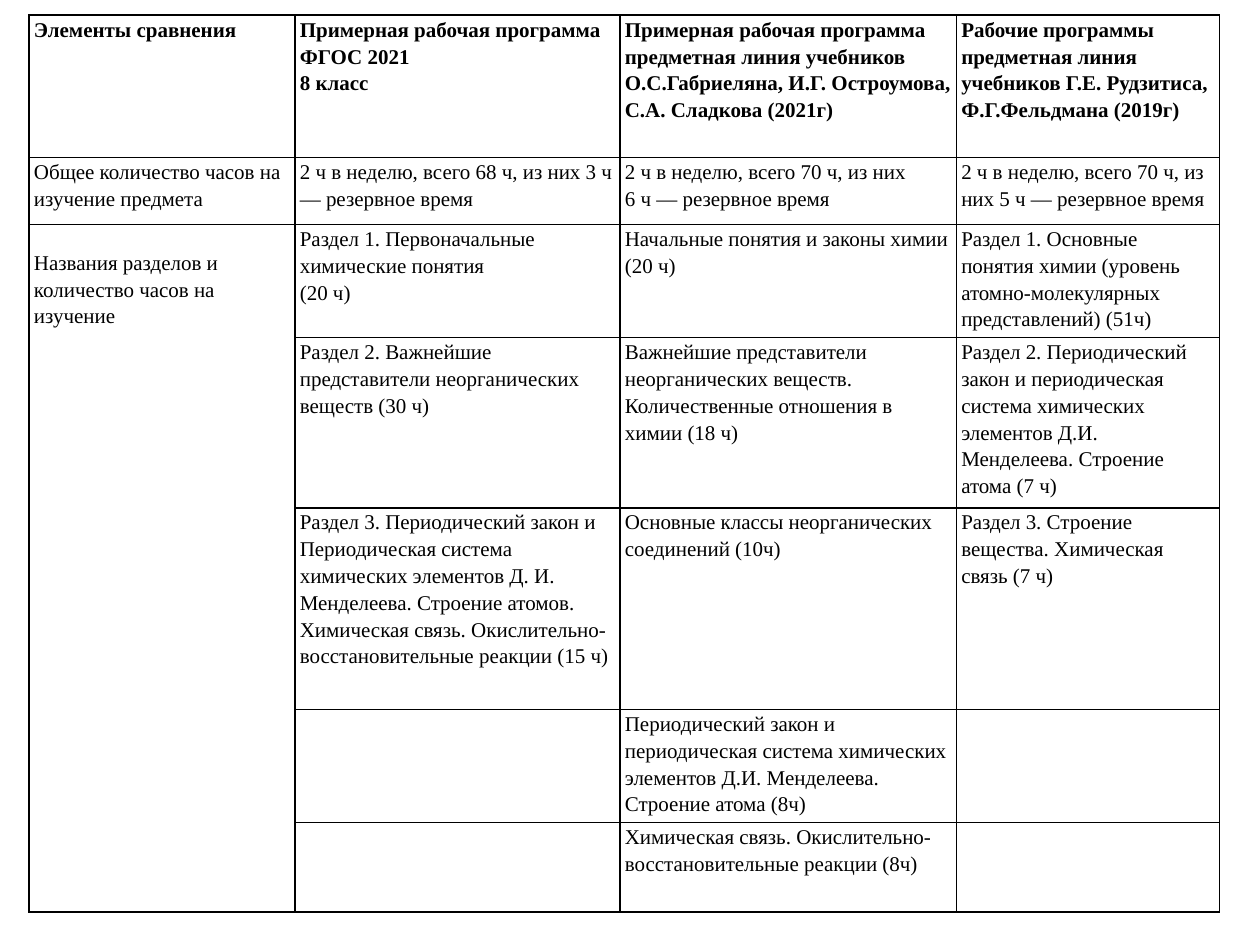
from lxml.etree import SubElement
from pptx import Presentation
from pptx.dml.color import RGBColor
from pptx.oxml.ns import qn
from pptx.util import Inches, Pt

COLOURS = {"ink": "000000"}
COLUMN_SHARES = [21.1, 25.8, 26.7, 20.9]
ROW_SHARES = [15.07, 7.07, 12, 18, 21.33, 12, 9.47]
SECTIONS_ROW = 2
COMPARISON = [
    ["Элементы сравнения",
     "Примерная рабочая программа ФГОС 2021\n8 класс",
     "Примерная рабочая программа предметная линия учебников "
     "О.С.Габриеляна, И.Г. Остроумова, С.А. Сладкова (2021г)",
     "Рабочие программы предметная линия учебников Г.Е. Рудзитиса, "
     "Ф.Г.Фельдмана (2019г)"],
    ["Общее количество часов на изучение предмета",
     "2 ч в неделю, всего 68 ч, из них 3 ч — резервное время",
     "2 ч в неделю, всего 70 ч, из них\n6 ч — резервное время",
     "2 ч в неделю, всего 70 ч, из них 5 ч — резервное время"],
    ["Названия разделов и количество часов на изучение",
     "Раздел 1. Первоначальные химические понятия\n(20 ч)",
     "Начальные понятия и законы химии (20 ч)",
     "Раздел 1. Основные понятия химии (уровень атомно-молекулярных "
     "представлений) (51ч)"],
    ["",
     "Раздел 2. Важнейшие представители неорганических веществ (30 ч)",
     "Важнейшие представители неорганических веществ. Количественные "
     "отношения в химии (18 ч)",
     "Раздел 2. Периодический закон и периодическая система химических "
     "элементов Д.И. Менделеева. Строение атома (7 ч)"],
    ["",
     "Раздел 3. Периодический закон и Периодическая система химических "
     "элементов Д. И. Менделеева. Строение атомов. Химическая связь. "
     "Окислительно-восстановительные реакции (15 ч)",
     "Основные классы неорганических соединений (10ч)",
     "Раздел 3. Строение вещества. Химическая связь (7 ч)"],
    ["", "",
     "Периодический закон и периодическая система химических элементов "
     "Д.И. Менделеева. Строение атома (8ч)", ""],
    ["", "",
     "Химическая связь. Окислительно-восстановительные реакции (8ч)", ""],
]


class SlideBuilder:
    """Draws elements on one slide, with lengths in percent of its size."""

    font_format = {"name": "Times New Roman", "size": Pt(12)}
    cell_format = {"margin_left": Inches(0.04), "margin_right": Inches(0.04),
                   "margin_top": 0, "margin_bottom": 0}
    border_width = Pt(1)

    def __init__(self, deck):
        self.width, self.height = deck.slide_width, deck.slide_height
        self.slide = deck.slides.add_slide(deck.slide_layouts[6])

    def across(self, share):
        return round(self.width * share / 100)

    def down(self, share):
        return round(self.height * share / 100)

    def table(self, left, top, columns, rows, texts):
        frame = self.slide.shapes.add_table(
            len(rows), len(columns), self.across(left), self.down(top),
            self.across(sum(columns)), self.down(sum(rows)))
        table = frame.table
        table.first_row = table.horz_banding = False
        for column, share in zip(table.columns, columns):
            column.width = self.across(share)
        for row, share in zip(table.rows, rows):
            row.height = self.down(share)
        for row_index, row_texts in enumerate(texts):
            for column_index, text in enumerate(row_texts):
                self.cell(table.cell(row_index, column_index), text, row_index == 0)
        return table

    def cell(self, cell, text, bold):
        for name, value in self.cell_format.items():
            setattr(cell, name, value)
        cell.fill.background()
        self.borders(cell)
        if not text:
            return
        cell.text = text
        for para in cell.text_frame.paragraphs:
            para.line_spacing = 1.15
            for span in para.runs:
                for name, value in {**self.font_format, "bold": bold}.items():
                    setattr(span.font, name, value)
                span.font.color.rgb = RGBColor.from_string(COLOURS["ink"])

    def borders(self, cell):
        properties = cell._tc.get_or_add_tcPr()
        for index, side in enumerate(("lnL", "lnR", "lnT", "lnB")):
            line = SubElement(properties, qn(f"a:{side}"), w=str(self.border_width))
            fill = SubElement(line, qn("a:solidFill"))
            SubElement(fill, qn("a:srgbClr"), val=COLOURS["ink"])
            properties.insert(index, line)


def main():
    deck = Presentation()
    deck.slide_width, deck.slide_height = Inches(10), Inches(7.5)
    builder = SlideBuilder(deck)
    table = builder.table(2.3, 1.6, COLUMN_SHARES, ROW_SHARES, COMPARISON)
    sections = table.cell(SECTIONS_ROW, 0)
    sections.merge(table.cell(len(ROW_SHARES) - 1, 0))
    sections.margin_top = Inches(0.19)
    deck.save("out.pptx")


if __name__ == "__main__":
    main()
